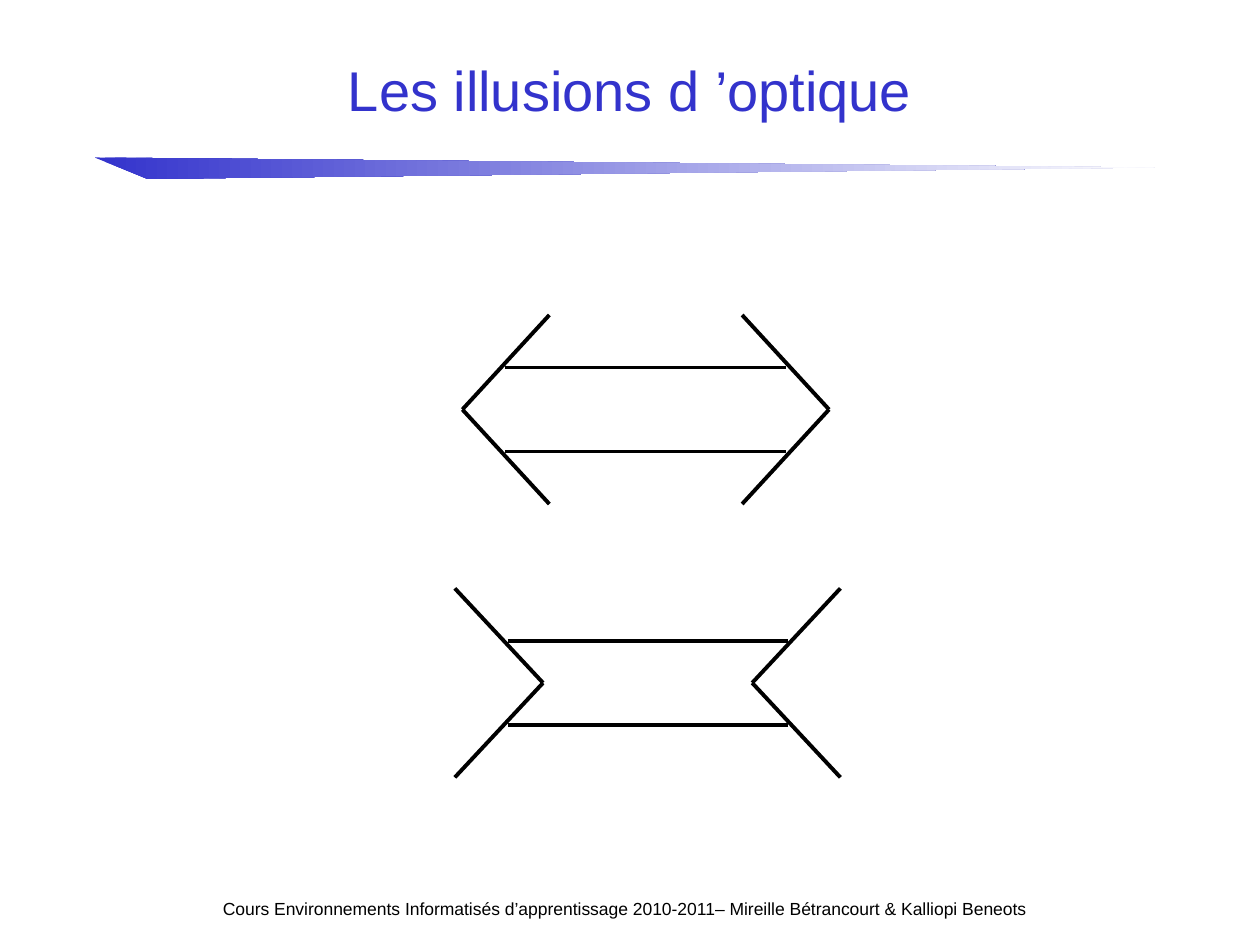
from pptx import Presentation
from pptx.dml.color import RGBColor
from pptx.enum.shapes import MSO_CONNECTOR
from pptx.enum.text import MSO_ANCHOR, PP_ALIGN
from pptx.oxml.ns import qn
from pptx.util import Inches, Pt

BLUE = RGBColor(0x33, 0x33, 0xCC)
BLACK = RGBColor(0, 0, 0)
WHITE = RGBColor(0xFF, 0xFF, 0xFF)


class SlideBuilder:
    font = "Arial"
    line_width = Pt(2.25)

    def __init__(self, slide):
        self.slide = slide
        self.shapes = slide.shapes

    def place(self, sp, left, top, width, height):
        sp.left, sp.top = Inches(left), Inches(top)
        sp.width, sp.height = Inches(width), Inches(height)

    def set_text(self, tf, text, size, color, align):
        tf.text = text
        tf.word_wrap = True
        p = tf.paragraphs[0]
        p.alignment = align
        font = p.runs[0].font
        font.name, font.size, font.color.rgb = self.font, Pt(size), color

    def title(self, text, box):
        sp = self.shapes.title
        self.place(sp, *box)
        sp.text_frame.vertical_anchor = MSO_ANCHOR.MIDDLE
        self.set_text(sp.text_frame, text, 32, BLUE, PP_ALIGN.CENTER)

    def footer(self, text, box):
        sp = self.shapes.add_textbox(*map(Inches, box))
        self.set_text(sp.text_frame, text, 10, BLACK, PP_ALIGN.LEFT)

    def wedge(self, points):
        """Draw a closed outline that fades from blue to white."""
        start, *rest = [(Inches(x), Inches(y)) for x, y in points]
        builder = self.shapes.build_freeform(*start)
        builder.add_line_segments(rest, close=True)
        sp = builder.convert_to_shape()
        sp.shadow.inherit = False
        sp.line.fill.background()
        sp.fill.gradient()
        sp.fill.gradient_angle = 0
        for stop, color in zip(sp.fill.gradient_stops, (BLUE, WHITE)):
            stop.color.rgb = color

    def line(self, x1, y1, x2, y2):
        cn = self.shapes.add_connector(
            MSO_CONNECTOR.STRAIGHT, *map(Inches, (x1, y1, x2, y2)))
        cn.line.color.rgb = BLACK
        cn.line.width = self.line_width
        sp_pr = cn._element.spPr
        sp_pr.append(sp_pr.makeelement(qn("a:effectLst"), {}))

    def illusion(self, middle, bar, chevrons):
        """Draw two equal bars between chevrons given as (end x, tip x)."""
        for side in (-1, 1):
            y = middle + side / 3
            self.line(bar[0], y, bar[1], y)
        for end, tip in chevrons:
            for side in (-1, 1):
                self.line(end, middle + side * 0.75, tip, middle)


def main():
    prs = Presentation()
    prs.slide_width, prs.slide_height = Inches(10), Inches(7.5)
    s = SlideBuilder(prs.slides.add_slide(prs.slide_layouts[5]))
    s.wedge([(0.75, 1.25), (1.17, 1.42), (9.17, 1.33)])
    s.title("Les illusions d ’optique", (0.75, 0.08, 8.5, 1.25))
    s.illusion(3.25, (4.01, 6.24), [(5.89, 6.58), (4.36, 3.67)])
    s.illusion(5.42, (4.03, 6.25), [(6.67, 5.97), (3.61, 4.31)])
    s.footer("Cours Environnements Informatisés d’apprentissage 2010-2011"
             "– Mireille Bétrancourt & Kalliopi Beneots",
             (1.67, 7.08, 8.5, 0.5))
    prs.save("out.pptx")


if __name__ == "__main__":
    main()
